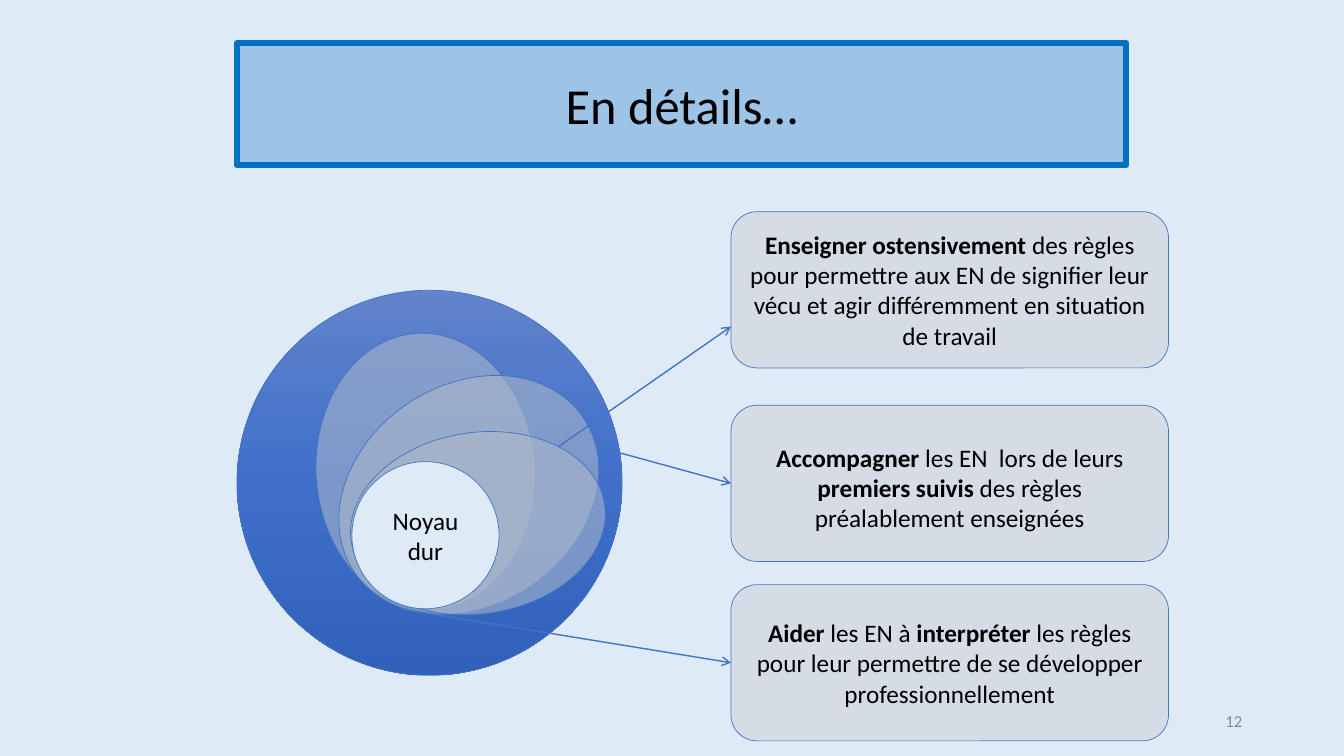
from copy import deepcopy
from dataclasses import dataclass

from lxml import etree
from pptx import Presentation
from pptx.dml.color import RGBColor
from pptx.enum.shapes import MSO_CONNECTOR, MSO_SHAPE
from pptx.enum.text import MSO_ANCHOR, PP_ALIGN
from pptx.oxml.ns import qn
from pptx.util import Inches, Pt

OVAL, ROUNDED = MSO_SHAPE.OVAL, MSO_SHAPE.ROUNDED_RECTANGLE
STRAIGHT = MSO_CONNECTOR.STRAIGHT
MIDDLE = MSO_ANCHOR.MIDDLE
CENTER, RIGHT = PP_ALIGN.CENTER, PP_ALIGN.RIGHT
LEFT_SIDE = 1


@dataclass(frozen=True)
class Theme:
    font: str = "Calibri"
    background: str = "DEEBF7"
    outline: str = "4472C4"
    banner: str = "9DC3E6"
    banner_edge: str = "0070C0"
    card: str = "D6DCE5"
    petal: str = "ADB9CA"
    petal_alpha: int = 56
    disc: tuple = ("6183CB", "3E70CA", "3062BB")
    ink: str = "000000"
    muted: str = "898989"
    title_size: int = 36
    body_size: int = 18
    number_size: int = 12
    thin: float = 0.5
    arrow: float = 1
    thick: float = 4.5


THEME = Theme()


def rgb(code):
    return RGBColor.from_string(code)


def paint(shape, fill, edge=THEME.outline, width=THEME.thin):
    if fill:
        shape.fill.solid()
        shape.fill.fore_color.rgb = rgb(fill)
    shape.line.color.rgb = rgb(edge)
    shape.line.width = Pt(width)


def add_outlined(slide, kind, box, fill):
    shape = slide.shapes.add_shape(kind, *map(Inches, box))
    shape.shadow.inherit = False
    paint(shape, fill)
    return shape


def style_text(frame, size, color=THEME.ink, align=CENTER):
    frame.word_wrap = True
    frame.vertical_anchor = MIDDLE
    for paragraph in frame.paragraphs:
        paragraph.alignment = align
        for run in paragraph.runs:
            run.font.name = THEME.font
            run.font.size = Pt(size)
            run.font.color.rgb = rgb(color)


# Title banner
def add_banner(slide, box, wording):
    title = slide.shapes.title
    title.left, title.top, title.width, title.height = map(Inches, box)
    geometry = etree.SubElement(title._element.spPr, qn("a:prstGeom"), prst="roundRect")
    etree.SubElement(geometry, qn("a:avLst"))
    paint(title, THEME.banner, THEME.banner_edge, THEME.thick)
    title.text_frame.text = wording
    style_text(title.text_frame, THEME.title_size)


# Nested ovals around the core
def add_disc(slide, box):
    disc = add_outlined(slide, OVAL, box, None)
    disc.fill.gradient()
    disc.fill.gradient_angle = 270
    stop_list = disc.fill._fill._gradFill.gsLst
    stop_list.append(deepcopy(stop_list[-1]))
    for index, (stop, color) in enumerate(zip(disc.fill.gradient_stops, THEME.disc)):
        stop.position = index / 2
        stop.color.rgb = rgb(color)


def add_petal(slide, box, rotation):
    petal = add_outlined(slide, OVAL, box, THEME.petal)
    petal.rotation = rotation
    color = petal._element.spPr.find(qn("a:solidFill"))[0]
    etree.SubElement(color, qn("a:alpha"), val=str(THEME.petal_alpha * 1000))


def add_core_diagram(slide, left, top):
    add_disc(slide, (left, top, 3.82, 3.82))
    for dx, dy, width, height, rotation in (
        (0.5, 0.71, 2.74, 2.17, 86.1),
        (0.93, 0.94, 2.74, 2.18, 146),
        (1.12, 1.41, 2.54, 1.8, 171.6),
    ):
        add_petal(slide, (left + dx, top + dy, width, height), rotation)
    core = add_outlined(slide, OVAL, (left + 1.14, top + 1.7, 1.46, 1.46), THEME.background)
    core.text_frame.text = "Noyau dur"
    style_text(core.text_frame, THEME.body_size)


# Explanation cards: pieces alternate between bold and regular
def add_card(slide, box, pieces, lowering):
    card = add_outlined(slide, ROUNDED, box, THEME.card)
    frame = card.text_frame
    frame.margin_top = Inches(0.05 + lowering)
    for index, piece in enumerate(pieces):
        run = frame.paragraphs[0].add_run()
        run.text = piece
        run.font.bold = index % 2 == 0
    style_text(frame, THEME.body_size)
    return card


# Arrows from the diagram to the cards
def add_arrow(slide, start, end, card=None):
    arrow = slide.shapes.add_connector(STRAIGHT, *map(Inches, start + end))
    if card is not None:
        arrow.end_connect(card, LEFT_SIDE)
    arrow.line.color.rgb = rgb(THEME.outline)
    arrow.line.width = Pt(THEME.arrow)
    etree.SubElement(arrow.line._get_or_add_ln(), qn("a:tailEnd"), type="arrow")
    etree.SubElement(arrow._element.spPr, qn("a:effectLst"))


def add_explanations(slide, left, width, height):
    rows = (
        (2.1, 0, (5.54, 4.43), 1.14, (
            "Enseigner ostensivement ",
            "des règles pour permettre aux EN de signifier leur vécu "
            "et agir différemment en situation de travail")),
        (4.02, 0.08, (5.92, 4.43), None, (
            "Accompagner", " les EN  lors de leurs ",
            "premiers suivis ", "des règles préalablement enseignées")),
        (5.8, 0, (3.96, 6.04), None, (
            "Aider", " les EN à", " interpréter ",
            "les règles pour leur permettre de se développer professionnellement")),
    )
    for top, lowering, start, drop, pieces in rows:
        card = add_card(slide, (left, top, width, height), pieces, lowering)
        if drop is None:
            add_arrow(slide, start, (left, top + height / 2), card)
        else:
            add_arrow(slide, start, (left, top + drop))


# Page number
def add_page_number(slide, box, number):
    page = slide.shapes.add_textbox(*map(Inches, box))
    page.text_frame.text = number
    style_text(page.text_frame, THEME.number_size, THEME.muted, RIGHT)


def main():
    deck = Presentation()
    deck.slide_width, deck.slide_height = Inches(13.33), Inches(7.5)
    slide = deck.slides.add_slide(deck.slide_layouts.get_by_name("Title Only"))
    slide.background.fill.solid()
    slide.background.fill.fore_color.rgb = rgb(THEME.background)
    add_banner(slide, (2.35, 0.43, 8.82, 1.21), "En détails…")
    add_core_diagram(slide, 2.35, 2.88)
    add_page_number(slide, (9.42, 6.95, 3, 0.4), "12")
    add_explanations(slide, 7.25, 4.34, 1.55)
    deck.save("out.pptx")


if __name__ == "__main__":
    main()
